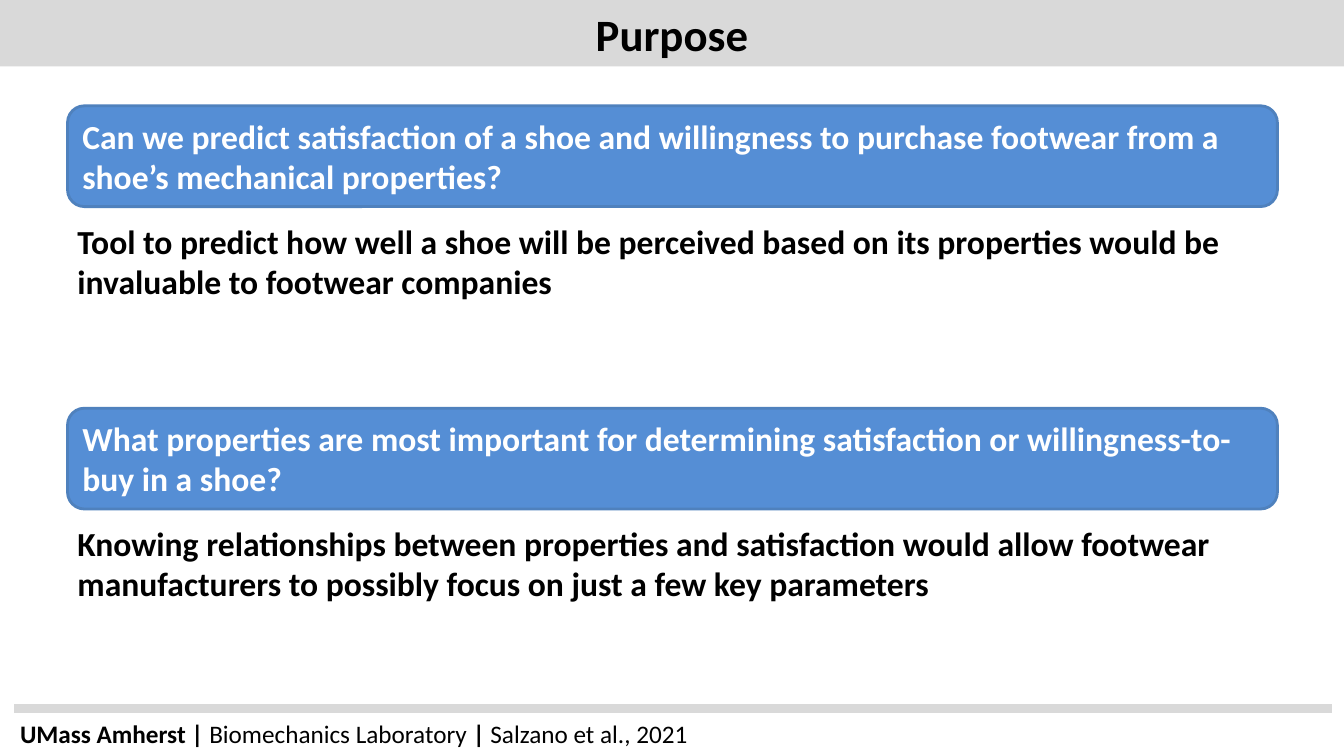
"""Build the Purpose slide: two research questions with their rationale."""
from dataclasses import dataclass

from lxml import etree
from pptx import Presentation
from pptx.dml.color import RGBColor
from pptx.enum.shapes import MSO_CONNECTOR, MSO_SHAPE
from pptx.enum.text import MSO_ANCHOR, PP_ALIGN
from pptx.oxml.ns import qn
from pptx.util import Pt

RECTANGLE = MSO_SHAPE.RECTANGLE
ROUNDED = MSO_SHAPE.ROUNDED_RECTANGLE
STRAIGHT = MSO_CONNECTOR.STRAIGHT
TOP, MIDDLE = MSO_ANCHOR.TOP, MSO_ANCHOR.MIDDLE
LEFT, CENTER = PP_ALIGN.LEFT, PP_ALIGN.CENTER

EMU_PER_PX = 9144
PAGE_WIDTH, PAGE_HEIGHT = 1333, 750
BOX_LEFT, BOX_WIDTH, BOX_HEIGHT = 67, 1200, 100
FIRST_TOP, QUESTION_STEP, ANSWER_OFFSET = 105, 300, 109


@dataclass(frozen=True)
class Theme:
    """Colours and type of the slide."""
    font: str = "Calibri"
    title_size: int = 32
    body_size: int = 24
    footer_size: int = 18
    black: RGBColor = RGBColor(0x00, 0x00, 0x00)
    white: RGBColor = RGBColor(0xFF, 0xFF, 0xFF)
    grey: RGBColor = RGBColor(0xD9, 0xD9, 0xD9)
    blue: RGBColor = RGBColor(0x55, 0x8E, 0xD5)
    outline: RGBColor = RGBColor(0x4F, 0x81, 0xBD)


THEME = Theme()

QUESTIONS = [
    ("Can we predict satisfaction of a shoe and willingness to purchase "
     "footwear from a shoe’s mechanical properties?",
     "Tool to predict how well a shoe will be perceived based on its "
     "properties would be invaluable to footwear companies"),
    ("What properties are most important for determining satisfaction or "
     "willingness-to-buy in a shoe?",
     "Knowing relationships between properties and satisfaction would allow "
     "footwear manufacturers to possibly focus on just a few key parameters"),
]

FOOTER = [
    ("UMass Amherst | ", True),
    ("Biomechanics Laboratory ", False),
    ("| ", True),
    ("Salzano et al., 2021", False),
]


def px(*lengths):
    """Turn whole pixels into EMU."""
    return [length * EMU_PER_PX for length in lengths]


def write_text(box, spans, size, color, align=LEFT, anchor=TOP):
    """Write (text, bold) spans as the one paragraph of a box."""
    frame = box.text_frame
    frame.word_wrap = True
    frame.vertical_anchor = anchor
    para = frame.paragraphs[0]
    para.alignment = align
    for text, bold in spans:
        span = para.add_run()
        span.text = text
        span.font.name = THEME.font
        span.font.size = Pt(size)
        span.font.bold = bold
        span.font.color.rgb = color


def add_panel(page, kind, frame, fill, outline=None):
    """Add a filled shape, outlined if a colour is given."""
    panel = page.shapes.add_shape(kind, *px(*frame))
    panel.shadow.inherit = False
    panel.fill.solid()
    panel.fill.fore_color.rgb = fill
    if outline is None:
        panel.line.fill.background()
    else:
        panel.line.color.rgb = outline
        panel.line.width = Pt(2)
    return panel


def add_title(page, text):
    """Add the grey title band."""
    band = add_panel(page, RECTANGLE, (0, 0, PAGE_WIDTH, 66), THEME.grey)
    write_text(band, [(text, True)], THEME.title_size, THEME.black, CENTER, MIDDLE)


def add_question(page, top, question, answer):
    """Add a question panel and the answer below it."""
    panel = add_panel(page, ROUNDED, (BOX_LEFT, top, BOX_WIDTH, BOX_HEIGHT),
                      THEME.blue, THEME.outline)
    write_text(panel, [(question, True)], THEME.body_size, THEME.white)
    box = page.shapes.add_textbox(
        *px(BOX_LEFT, top + ANSWER_OFFSET, BOX_WIDTH, BOX_HEIGHT))
    write_text(box, [(answer, True)], THEME.body_size, THEME.black)


def add_footer(page):
    """Add the footer rule and its credit line."""
    rule = page.shapes.add_connector(STRAIGHT, *px(14, 703, 1321, 703))
    rule.line.color.rgb = THEME.grey
    rule.line.width = Pt(6)
    etree.SubElement(rule._element.spPr, qn("a:effectLst"))
    box = page.shapes.add_textbox(*px(10, 708, 898, 40))
    write_text(box, FOOTER, THEME.footer_size, THEME.black)


def main():
    """Build and save the deck."""
    deck = Presentation()
    deck.slide_width, deck.slide_height = px(PAGE_WIDTH, PAGE_HEIGHT)
    page = deck.slides.add_slide(deck.slide_layouts[6])
    add_footer(page)
    add_title(page, "Purpose")
    for index, (question, answer) in enumerate(QUESTIONS):
        add_question(page, FIRST_TOP + index * QUESTION_STEP, question, answer)
    deck.save("out.pptx")


if __name__ == "__main__":
    main()
